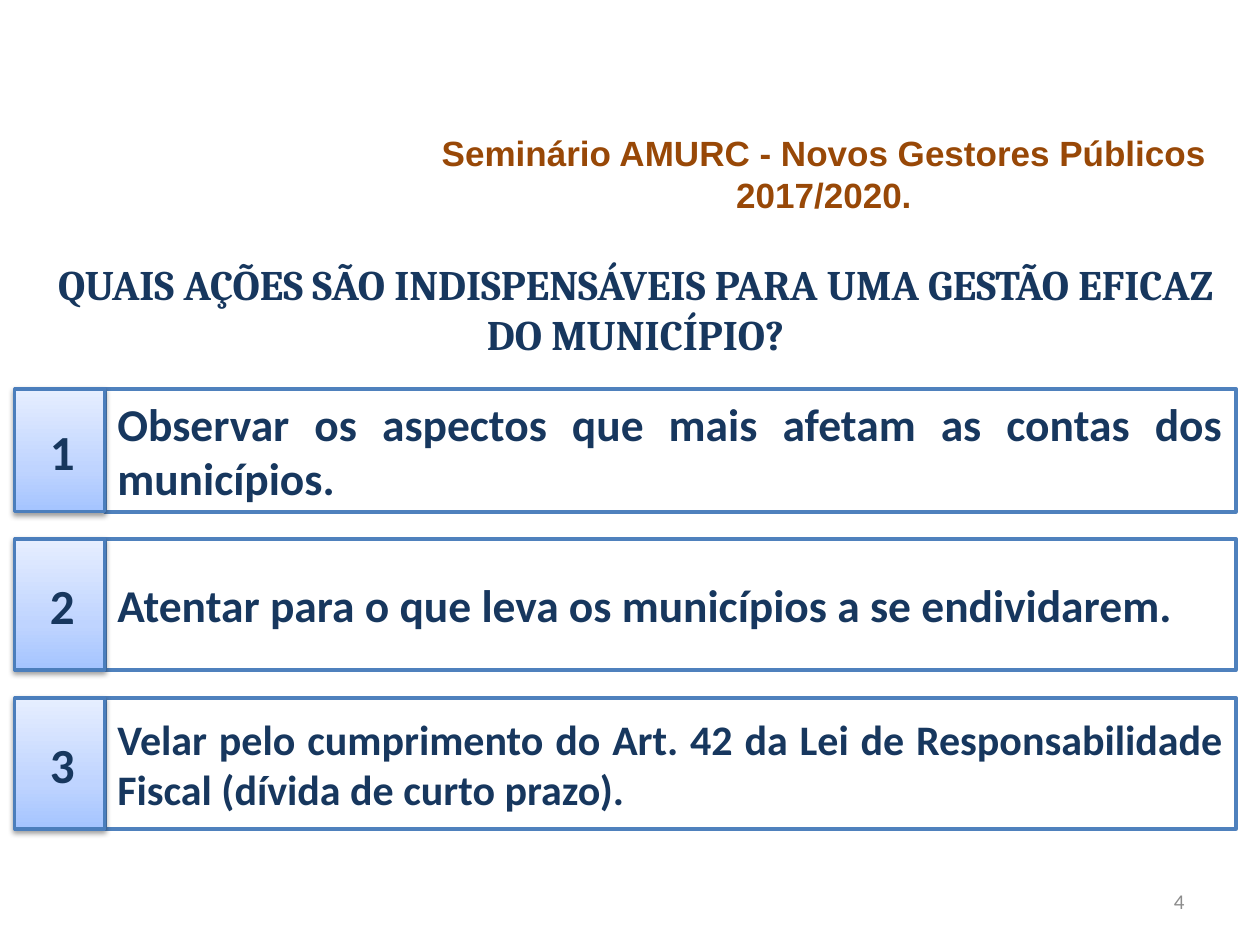
from copy import deepcopy

from lxml.etree import SubElement
from pptx import Presentation
from pptx.dml.color import RGBColor
from pptx.enum.shapes import MSO_SHAPE
from pptx.enum.text import MSO_ANCHOR, PP_ALIGN
from pptx.oxml.ns import qn
from pptx.util import Emu, Pt

PX = 914400 / 126
COLORS = {
    "navy": "17375E", "brown": "984807", "grey": "8C8C8C", "white": "FFFFFF",
    "panel_line": "4F81BD", "badge_line": "4B7EBC", "shadow": "000000",
}
BADGE_STOPS = [(0, "A4C4FF"), (0.35, "BFD4FF"), (1, "E6EEFF")]
BADGE_WIDTH = 90
ACTIONS = [
    (389, 123, 26, "Observar os aspectos que mais afetam as contas dos municípios."),
    (539, 131, 26, "Atentar para o que leva os municípios a se endividarem."),
    (698, 131, 24, "Velar pelo cumprimento do Art. 42 da Lei de Responsabilidade "
                   "Fiscal (dívida de curto prazo)."),
]


def px(length):
    return Emu(round(length * PX))


def rgb(name):
    return RGBColor.from_string(COLORS[name])


def write(shape, text, size, font="Calibri", color="navy", bold=True,
          align=PP_ALIGN.JUSTIFY, anchor=MSO_ANCHOR.MIDDLE):
    frame = shape.text_frame
    frame.word_wrap = True
    frame.vertical_anchor = anchor
    paragraph = frame.paragraphs[0]
    paragraph.text = text
    paragraph.alignment = align
    paragraph.font.name = font
    paragraph.font.size = Pt(size)
    paragraph.font.bold = bold
    paragraph.font.color.rgb = rgb(color)


def add_label(slide, box, text, size, **style):
    write(slide.shapes.add_textbox(*map(px, box)), text, size, **style)


def add_rectangle(slide, box, line, width):
    rectangle = slide.shapes.add_shape(MSO_SHAPE.RECTANGLE, *map(px, box))
    rectangle.shadow.inherit = False
    rectangle.line.color.rgb = rgb(line)
    rectangle.line.width = Pt(width)
    return rectangle


def fill_badge(badge):
    """Give the badge its three-stop upward gradient."""
    badge.fill.gradient()
    badge.fill.gradient_angle = 90
    stop_list = badge._element.spPr.find(".//" + qn("a:gsLst"))
    stop_list.append(deepcopy(stop_list[-1]))
    for stop, (position, color) in zip(badge.fill.gradient_stops, BADGE_STOPS):
        stop.position = position
        stop.color.rgb = RGBColor.from_string(color)


def add_drop_shadow(shape):
    effects = shape._element.spPr.find(qn("a:effectLst"))
    shadow = SubElement(effects, qn("a:outerShdw"), blurRad="40000",
                        dist="20000", dir="5400000", rotWithShape="0")
    color = SubElement(shadow, qn("a:srgbClr"), val=COLORS["shadow"])
    SubElement(color, qn("a:alpha"), val="38000")


def add_action(slide, box, number, text, size):
    """Place a numbered badge and, to its right, the text panel."""
    left, top, width, height = box
    panel = add_rectangle(
        slide, (left + BADGE_WIDTH, top, width - BADGE_WIDTH, height), "panel_line", 2)
    panel.fill.solid()
    panel.fill.fore_color.rgb = rgb("white")
    write(panel, text, size)

    badge = add_rectangle(slide, (left, top, BADGE_WIDTH, height), "badge_line", 1.75)
    fill_badge(badge)
    add_drop_shadow(badge)
    write(badge, str(number), 28, align=PP_ALIGN.LEFT)
    badge.text_frame.margin_left = px(35)


def main():
    deck = Presentation()
    deck.slide_width, deck.slide_height = px(1260), px(945)
    slide = deck.slides.add_slide(deck.slide_layouts[6])

    add_label(slide, (422, 125, 804, 97),
              "Seminário AMURC - Novos Gestores Públicos 2017/2020.", 20,
              font="Arial", color="brown", align=PP_ALIGN.CENTER, anchor=MSO_ANCHOR.TOP)
    add_label(slide, (35, 252, 1201, 96),
              "QUAIS AÇÕES SÃO INDISPENSÁVEIS PARA UMA GESTÃO EFICAZ DO MUNICÍPIO?", 24,
              font="Cambria", align=PP_ALIGN.CENTER, anchor=MSO_ANCHOR.TOP)
    for number, (top, height, size, text) in enumerate(ACTIONS, start=1):
        add_action(slide, (15, top, 1221, height), number, text, size)
    add_label(slide, (903, 876, 294, 50), "4", 12,
              color="grey", bold=False, align=PP_ALIGN.RIGHT)

    deck.save("out.pptx")


if __name__ == "__main__":
    main()
